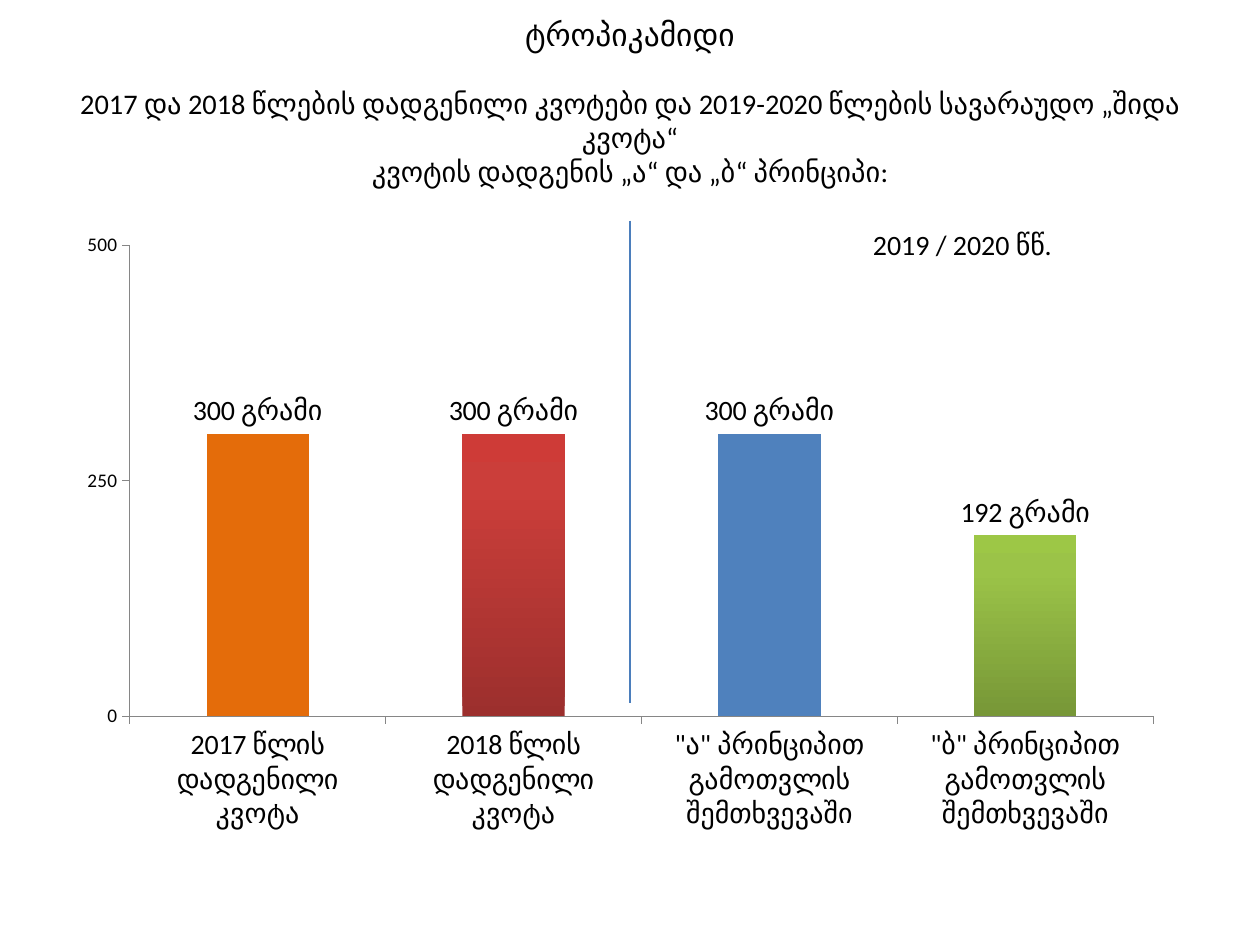
from copy import deepcopy
from dataclasses import dataclass
from typing import Optional

from lxml import etree
from pptx import Presentation
from pptx import util as u
from pptx.chart.data import CategoryChartData
from pptx.dml.color import RGBColor
from pptx.enum import chart as ch, shapes, text
from pptx.oxml import ns


@dataclass(frozen=True)
class Theme:
    font: str = "Calibri"
    ink: str = "000000"
    bar: str = "4F81BD"
    rule: str = "4B7EBC"
    axis: str = "868686"
    title: float = 18
    sub: float = 16.2
    body: float = 16
    tick: float = 11


@dataclass(frozen=True)
class Bar:
    name: str
    value: int
    fill: Optional[str] = None
    grad: tuple = ()


T = Theme()
UNIT = "გრამი"
BARS = [
    Bar("2017 წლის დადგენილი კვოტა", 300, fill="E46C0A"),
    Bar("2018 წლის დადგენილი კვოტა", 300,
        grad=((0, "9C2F2D"), (0.8, "CB3E3A"), (1, "CE3B37"))),
    Bar('"ა" პრინციპით გამოთვლის შემთხვევაში', 300),
    Bar('"ბ" პრინციპით გამოთვლის შემთხვევაში', 192,
        grad=((0, "779737"), (0.8, "9BC348"), (1, "9DC746"))),
]


def rgb(code: str) -> RGBColor:
    return RGBColor.from_string(code)


def style(font, size: float) -> None:
    font.name, font.size = T.font, u.Pt(size)
    font.color.rgb = rgb(T.ink)


def write(slide, lines, left, top, width, height, *, align=text.PP_ALIGN.LEFT,
          anchor=text.MSO_ANCHOR.TOP, foot=0.05, gap=0) -> None:
    """Write (text, size) lines; gap follows the first one, in points."""
    box = slide.shapes.add_textbox(*map(u.Inches, (left, top, width, height)))
    frame = box.text_frame
    frame.word_wrap, frame.vertical_anchor = True, anchor
    frame.margin_bottom = u.Inches(foot)
    for i, (words, size) in enumerate(lines):
        para = frame.paragraphs[0] if i == 0 else frame.add_paragraph()
        para.alignment = align
        para.space_after = u.Pt(0 if i else gap)
        run = para.add_run()
        run.text = words
        style(run.font, size)


def shade(chart, fill, stops) -> None:
    """Fill a bar with a gradient that rises from its foot."""
    fill.gradient()
    fill.gradient_angle = 90
    items = chart._chartSpace.xpath(".//a:gsLst")[-1]
    for _ in range(len(stops) - len(items)):
        items.append(deepcopy(items[-1]))
    for stop, (place, code) in zip(fill.gradient_stops, stops):
        stop.position, stop.color.rgb = place, rgb(code)


def place(chart, **part: float) -> None:
    """Fix the inner plot area, in fractions of the chart."""
    area = chart._chartSpace.chart.plotArea
    for old in area.findall(ns.qn("c:layout")):
        area.remove(old)
    outer = etree.Element(ns.qn("c:layout"))
    area.insert(0, outer)
    inner = etree.SubElement(outer, ns.qn("c:manualLayout"))
    marks = {"layoutTarget": "inner", "xMode": "edge", "yMode": "edge", **part}
    for tag, val in marks.items():
        etree.SubElement(inner, ns.qn(f"c:{tag}")).set("val", str(val))


def draw(slide, bars, left, top, width, height) -> None:
    data = CategoryChartData()
    data.categories = [bar.name for bar in bars]
    data.add_series("Series 1", [bar.value for bar in bars])
    chart = slide.shapes.add_chart(
        ch.XL_CHART_TYPE.COLUMN_CLUSTERED,
        *map(u.Inches, (left, top, width, height)), data).chart
    chart.has_legend = chart.has_title = False
    style(chart.font, T.tick)
    place(chart, x=0.06, y=0.04, w=0.92, h=0.76)

    # Axes
    cat, val = chart.category_axis, chart.value_axis
    for axis, size in ((cat, T.body), (val, T.tick)):
        axis.has_major_gridlines = False
        axis.major_tick_mark = ch.XL_TICK_MARK.OUTSIDE
        axis.format.line.color.rgb = rgb(T.axis)
        style(axis.tick_labels.font, size)
    val.minimum_scale, val.maximum_scale, val.major_unit = 0, 500, 250

    # Bars and their labels
    plot = chart.plots[0]
    plot.gap_width, plot.vary_by_categories = 150, False
    row = plot.series[0]
    row.format.fill.solid()
    row.format.fill.fore_color.rgb = rgb(T.bar)
    for i, bar in enumerate(bars):
        if bar.grad:
            shade(chart, row.points[i].format.fill, bar.grad)
        elif bar.fill:
            fill = row.points[i].format.fill
            fill.solid()
            fill.fore_color.rgb = rgb(bar.fill)
    tags = row.data_labels
    tags.show_value = True
    tags.number_format, tags.number_format_is_linked = f'0 "{UNIT}"', False
    tags.position = ch.XL_LABEL_POSITION.OUTSIDE_END
    style(tags.font, T.body)


def rule(slide, x, top, foot) -> None:
    line = slide.shapes.add_connector(
        shapes.MSO_CONNECTOR.STRAIGHT, *map(u.Inches, (x, top, x, foot)))
    line.line.color.rgb, line.line.width = rgb(T.rule), u.Pt(0.75)
    etree.SubElement(line._element.spPr, ns.qn("a:effectLst"))


def main() -> None:
    deck = Presentation()
    deck.slide_width, deck.slide_height = u.Inches(10), u.Inches(7.5)
    slide = deck.slides.add_slide(deck.slide_layouts[6])

    # Heading
    write(slide, [
        ("ტროპიკამიდი", T.title),
        ("2017 და 2018 წლების დადგენილი კვოტები და 2019-2020 წლების "
         "სავარაუდო „შიდა კვოტა“", T.sub),
        ("კვოტის დადგენის „ა“ და „ბ“ პრინციპი:", T.sub),
    ], 0.5, 0.3, 9, 1.25, align=text.PP_ALIGN.CENTER,
        anchor=text.MSO_ANCHOR.MIDDLE, foot=0.28, gap=19)

    # Quotas, split into set and expected years
    draw(slide, BARS, 0.5, 1.75, 8.83, 4.92)
    rule(slide, 5, 1.75, 5.58)
    write(slide, [("2019 / 2020 წწ.", T.body)], 6.83, 1.76, 2.25, 0.37)

    deck.save("out.pptx")


if __name__ == "__main__":
    main()
